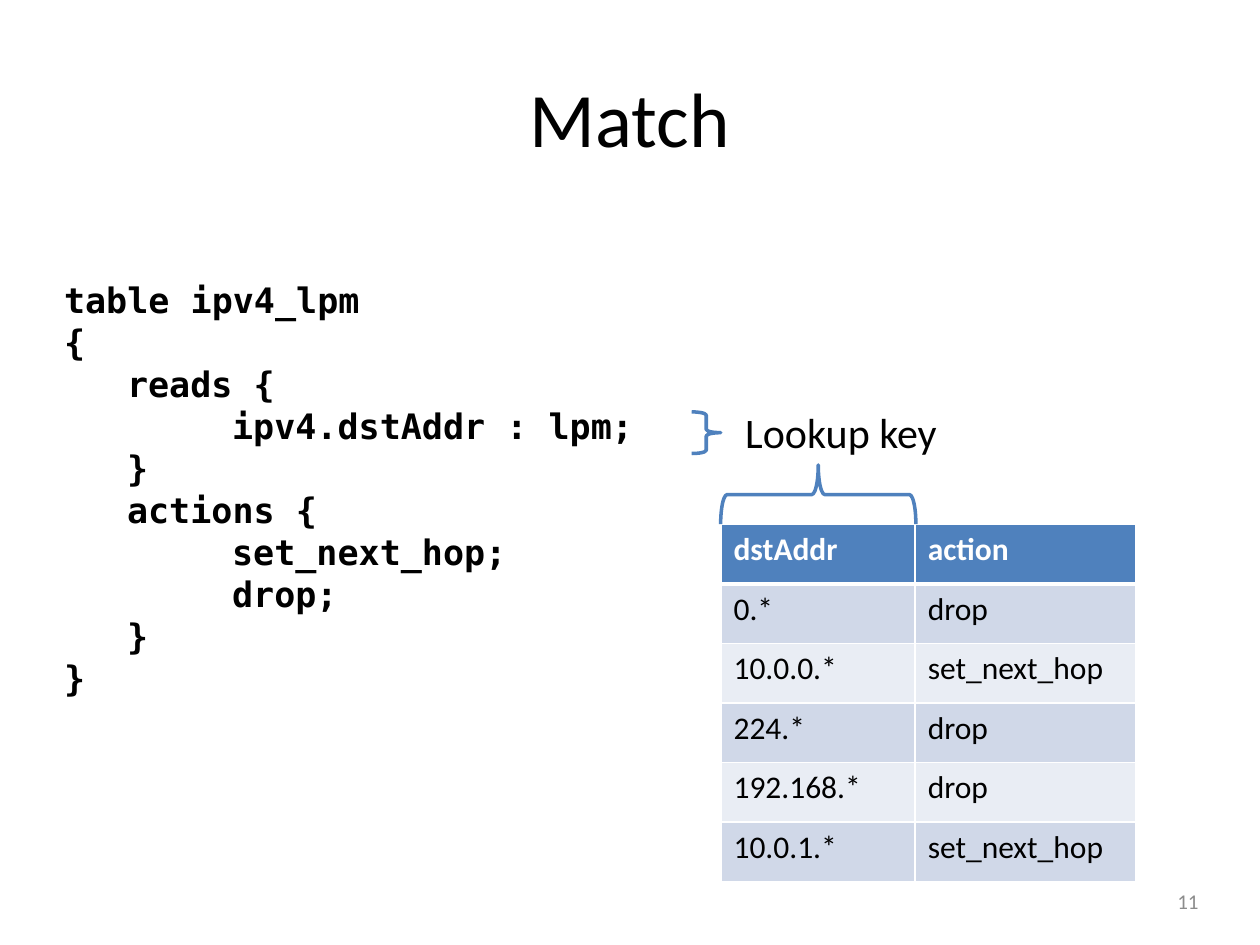
"""Builds the slide on matching: a table definition in code beside its lookup table."""
from dataclasses import dataclass

from lxml import etree
from pptx import Presentation
from pptx import util as u
from pptx.dml.color import RGBColor
from pptx.enum import shapes, text
from pptx.oxml import ns

BLACK = RGBColor(0x00, 0x00, 0x00)
WHITE = RGBColor(0xFF, 0xFF, 0xFF)
GREY = RGBColor(0x8C, 0x8C, 0x8C)
BLUE = RGBColor(0x4F, 0x81, 0xBD)
BAND_DARK = RGBColor(0xD0, 0xD8, 0xE8)
BAND_LIGHT = RGBColor(0xE9, 0xED, 0xF4)
SANS, MONO = "Calibri", "DejaVu Sans Mono"
INDENTS = (0, 36, 96)


@dataclass(frozen=True)
class Box:
    left: float
    top: float
    width: float
    height: float

    def lengths(self) -> tuple:
        return tuple(u.Pt(v) for v in (self.left, self.top, self.width, self.height))


@dataclass(frozen=True)
class Style:
    size: float
    color: RGBColor = BLACK
    font: str = SANS
    bold: bool = False


@dataclass(frozen=True)
class Label:
    wording: str
    box: Box
    style: Style
    align: text.PP_ALIGN = text.PP_ALIGN.LEFT
    anchor: text.MSO_ANCHOR = text.MSO_ANCHOR.TOP
    wrap: bool = True


@dataclass(frozen=True)
class Brace:
    box: Box
    rotation: float = 0


@dataclass(frozen=True)
class CodeLine:
    level: int
    wording: str


LABELS = (
    Label("Match", Box(36, 21.6, 648, 90), Style(44),
          text.PP_ALIGN.CENTER, text.MSO_ANCHOR.MIDDLE),
    Label("Lookup key", Box(418.8, 229, 126.7, 36), Style(24), wrap=False),
    Label("11", Box(617, 500.5, 75, 28.8), Style(12, GREY),
          text.PP_ALIGN.RIGHT, text.MSO_ANCHOR.MIDDLE),
)
BRACES = (
    Brace(Box(450.7, 226.8, 33.8, 111.6), 270),
    Brace(Box(395.3, 235.4, 16.6, 23.8)),
)
CODE = (
    CodeLine(0, "table ipv4_lpm"),
    CodeLine(0, "{"),
    CodeLine(1, "reads {"),
    CodeLine(2, "ipv4.dstAddr : lpm;"),
    CodeLine(1, "}"),
    CodeLine(1, "actions {"),
    CodeLine(2, "set_next_hop;"),
    CodeLine(2, "drop;"),
    CodeLine(1, "}"),
    CodeLine(0, "}"),
)
ENTRIES = (
    ("dstAddr", "action"),
    ("0.*", "drop"),
    ("10.0.0.*", "set_next_hop"),
    ("224.*", "drop"),
    ("192.168.*", "drop"),
    ("10.0.1.*", "set_next_hop"),
)
COLUMN_WIDTHS = (111, 126)
ROW_HEIGHT = 34


def add_run(paragraph, wording: str, style: Style) -> None:
    run = paragraph.add_run()
    run.text = wording
    run.font.name = style.font
    run.font.size = u.Pt(style.size)
    run.font.bold = style.bold
    run.font.color.rgb = style.color


def add_label(slide, label: Label) -> None:
    frame = slide.shapes.add_textbox(*label.box.lengths()).text_frame
    frame.word_wrap = label.wrap
    frame.vertical_anchor = label.anchor
    frame.paragraphs[0].alignment = label.align
    add_run(frame.paragraphs[0], label.wording, label.style)


def add_code(slide, lines: tuple[CodeLine, ...], box: Box) -> None:
    frame = slide.shapes.add_textbox(*box.lengths()).text_frame
    frame.word_wrap = False
    for number, line in enumerate(lines):
        paragraph = frame.add_paragraph() if number else frame.paragraphs[0]
        paragraph.line_spacing = u.Pt(24)
        paragraph._p.get_or_add_pPr().set("marL", str(u.Pt(INDENTS[line.level])))
        add_run(paragraph, line.wording, Style(20, font=MONO, bold=True))


def add_brace(slide, brace: Brace) -> None:
    shape = slide.shapes.add_shape(shapes.MSO_SHAPE.RIGHT_BRACE, *brace.box.lengths())
    shape.adjustments[0] = 0.11
    shape.adjustments[1] = 0.5
    shape.rotation = brace.rotation
    shape.shadow.inherit = False
    shape.fill.background()
    shape.line.color.rgb = BLUE
    shape.line.width = u.Pt(2)


def add_borders(cell, top: float, bottom: float) -> None:
    properties = cell._tc.get_or_add_tcPr()
    widths = {"lnL": 1, "lnR": 1, "lnT": top, "lnB": bottom}
    for position, (side, width) in enumerate(widths.items()):
        border = etree.Element(ns.qn(f"a:{side}"), w=str(u.Pt(width)))
        fill = etree.SubElement(border, ns.qn("a:solidFill"))
        etree.SubElement(fill, ns.qn("a:srgbClr"), val=str(WHITE))
        properties.insert(position, border)


def add_lookup_table(slide, left: float, top: float) -> None:
    box = Box(left, top, sum(COLUMN_WIDTHS), ROW_HEIGHT * len(ENTRIES))
    table = slide.shapes.add_table(len(ENTRIES), len(COLUMN_WIDTHS), *box.lengths()).table
    for column, width in zip(table.columns, COLUMN_WIDTHS):
        column.width = u.Pt(width)
    for row, entry in enumerate(ENTRIES):
        table.rows[row].height = u.Pt(ROW_HEIGHT)
        header = row == 0
        band = BLUE if header else BAND_DARK if row % 2 else BAND_LIGHT
        style = Style(18, WHITE if header else BLACK, bold=header)
        for column, wording in enumerate(entry):
            cell = table.cell(row, column)
            cell.fill.solid()
            cell.fill.fore_color.rgb = band
            add_borders(cell, 3 if row == 1 else 1, 3 if header else 1)
            add_run(cell.text_frame.paragraphs[0], wording, style)


def main() -> None:
    deck = Presentation()
    deck.slide_width, deck.slide_height = u.Pt(720), u.Pt(540)
    slide = deck.slides.add_slide(deck.slide_layouts[6])
    add_code(slide, CODE, Box(29.5, 155.5, 342, 247.2))
    add_lookup_table(slide, 412, 299.8)
    for brace in BRACES:
        add_brace(slide, brace)
    for label in LABELS:
        add_label(slide, label)
    deck.save("out.pptx")


if __name__ == "__main__":
    main()
